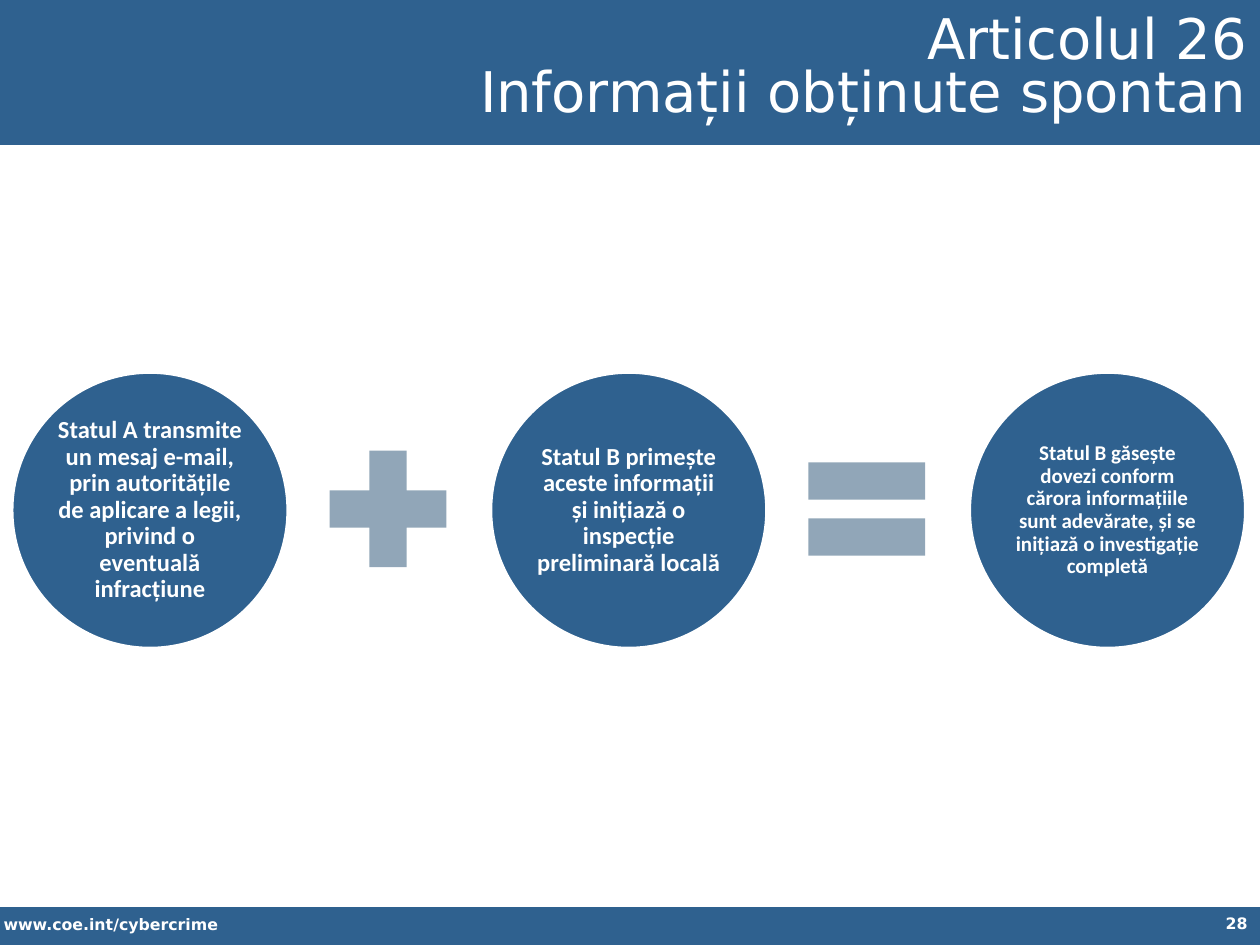
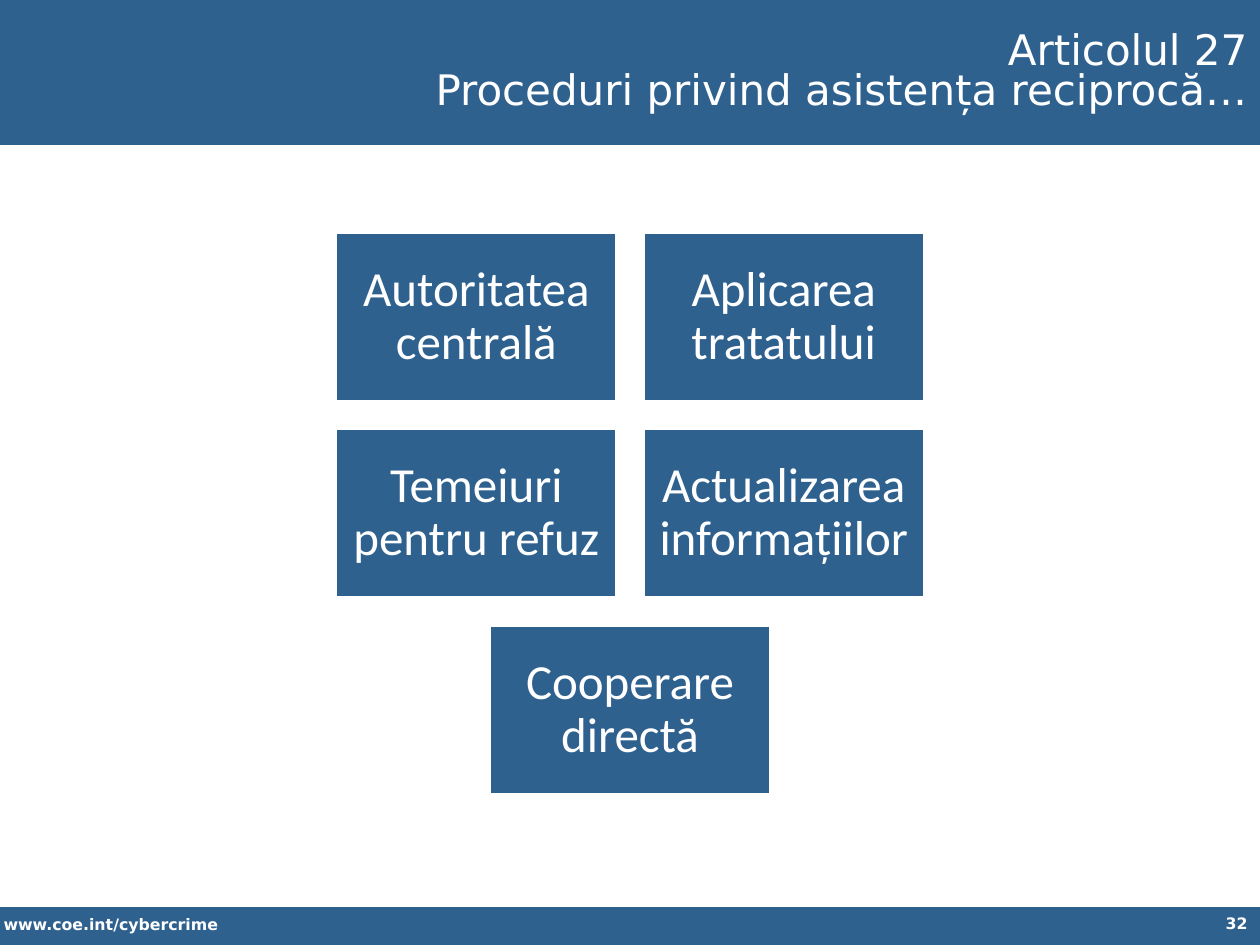
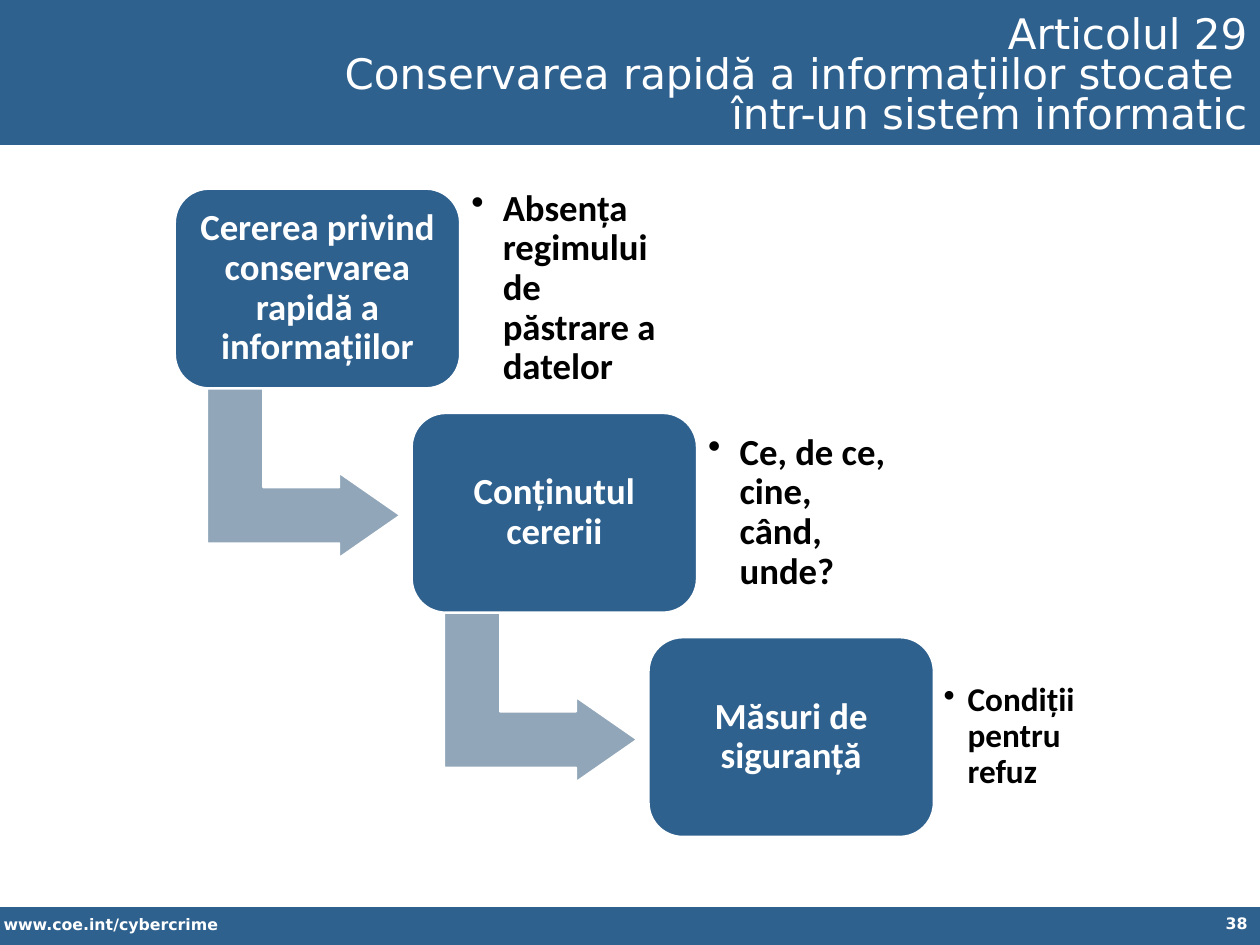
from dataclasses import dataclass
from typing import Any, NamedTuple

import pptx
import pptx.dml.color
import pptx.enum.shapes
import pptx.enum.text
import pptx.oxml.ns
import pptx.util
from lxml import etree

RGBColor = pptx.dml.color.RGBColor
KIND = pptx.enum.shapes.MSO_SHAPE
ALIGN = pptx.enum.text.PP_ALIGN
ANCHOR = pptx.enum.text.MSO_ANCHOR

BLUE = RGBColor(0x2F, 0x61, 0x8F)
GREY = RGBColor(0x91, 0xA6, 0xB8)
WHITE = RGBColor(0xFF, 0xFF, 0xFF)
BLACK = RGBColor(0x00, 0x00, 0x00)

SCALE = 9144
WIDE, HIGH = 1000, 750
SITE = "www.coe.int/cybercrime"


class Box(NamedTuple):
    left: int
    top: int
    width: int
    height: int


@dataclass(frozen=True)
class Style:
    size: int
    name: str = "Calibri"
    bold: bool = False
    color: RGBColor = WHITE
    align: Any = ALIGN.CENTER
    anchor: Any = ANCHOR.MIDDLE
    pad: tuple[int, int] = (10, 5)
    space: float = 0.9
    hang: int = 0


@dataclass(frozen=True)
class Title:
    box: Box
    size: int
    lines: tuple[str, ...]
    page: int


class Disc(NamedTuple):
    text: str
    size: int


class Step(NamedTuple):
    text: str
    note: str
    size: int
    pad: int
    hang: int


SMALL = Style(9, "DejaVu Sans", True, align=ALIGN.LEFT, anchor=ANCHOR.TOP, space=1.0)
PAGE = Style(9, "DejaVu Sans", True, align=ALIGN.RIGHT, anchor=ANCHOR.TOP, space=1.0)

DISCS = (
    Disc("Statul A transmite un mesaj e-mail, prin autoritățile de aplicare a legii, "
         "privind o eventuală infracțiune", 14),
    Disc("Statul B primește aceste informații și inițiază o inspecție preliminară locală", 14),
    Disc("Statul B găsește dovezi conform cărora informațiile sunt adevărate, "
         "și se inițiază o investigație completă", 12),
)
SIGNS = (KIND.MATH_PLUS, KIND.MATH_EQUAL)

ROWS = (
    ("Autoritatea centrală", "Aplicarea tratatului"),
    ("Temeiuri pentru refuz", "Actualizarea informațiilor"),
    ("Cooperare directă",),
)

STEPS = (
    Step("Cererea privind conservarea rapidă a informațiilor",
         "Absența regimului de păstrare a datelor", 21, 9, 25),
    Step("Conținutul cererii", "Ce, de ce, cine, când, unde?", 21, 9, 25),
    Step("Măsuri de siguranță", "Condiții pentru refuz", 19, 8, 19),
)


def px(count: int) -> int:
    return pptx.util.Emu(count * SCALE)


def apply(target: Any, values: dict[str, Any]) -> None:
    for key, value in values.items():
        setattr(target, key, value)


def bullet(para: Any, hang: int) -> None:
    para.level = 1
    props = para._p.get_or_add_pPr()
    props.set("marL", str(px(hang)))
    props.set("indent", str(-px(hang)))
    mark = etree.SubElement(props, pptx.oxml.ns.qn("a:buChar"))
    mark.set("char", "•")


def write(shape: Any, lines: tuple[str, ...], style: Style) -> None:
    frame = shape.text_frame
    side, edge = map(px, style.pad)
    apply(frame, {
        "word_wrap": True, "vertical_anchor": style.anchor,
        "margin_left": side, "margin_right": side,
        "margin_top": edge, "margin_bottom": edge,
    })
    for index, line in enumerate(lines):
        para = frame.add_paragraph() if index else frame.paragraphs[0]
        if style.hang:
            bullet(para, style.hang)
        apply(para, {"alignment": style.align, "line_spacing": style.space})
        run = para.add_run()
        run.text = line
        apply(run.font, {"name": style.name, "bold": style.bold,
                         "size": pptx.util.Pt(style.size)})
        run.font.color.rgb = style.color


def draw(slide: Any, kind: Any, box: Box, fill: RGBColor = BLUE, rim: bool = False) -> Any:
    shape = slide.shapes.add_shape(kind, *map(px, box))
    shape.shadow.inherit = False
    shape.fill.solid()
    shape.fill.fore_color.rgb = fill
    if rim:
        shape.line.color.rgb = WHITE
        shape.line.width = pptx.util.Pt(1)
    else:
        shape.line.fill.background()
    return shape


def label(slide: Any, box: Box, text: str, style: Style) -> None:
    write(slide.shapes.add_textbox(*map(px, box)), (text,), style)


def start(deck: Any, title: Title) -> Any:
    slide = deck.slides.add_slide(deck.slide_layouts[6])
    draw(slide, KIND.RECTANGLE, Box(0, -3, WIDE, 118))
    draw(slide, KIND.RECTANGLE, Box(0, 720, WIDE, 32))
    label(slide, Box(-7, 721, 352, 25), SITE, SMALL)
    label(slide, Box(767, 720, 233, 30), str(title.page), PAGE)
    head = draw(slide, KIND.RECTANGLE, title.box)
    write(head, title.lines, Style(title.size, "DejaVu Sans", align=ALIGN.RIGHT, space=0.8))
    return slide


def add_sum(slide: Any) -> None:
    pitch = 380
    for index, disc in enumerate(DISCS):
        shape = draw(slide, KIND.OVAL, Box(10 + index * pitch, 296, 218, 218), rim=True)
        write(shape, (disc.text,), Style(disc.size, bold=True, pad=(2, 2)))
    for index, sign in enumerate(SIGNS):
        draw(slide, sign, Box(245 + index * pitch, 341, 126, 126), GREY)


def add_grid(slide: Any) -> None:
    width, height, gap = 222, 133, 22
    for level, row in enumerate(ROWS):
        left = (WIDE - len(row) * (width + gap) + gap) // 2
        top = 185 + level * 156
        for index, text in enumerate(row):
            box = Box(left + index * (width + gap), top, width, height)
            write(draw(slide, KIND.RECTANGLE, box, rim=True), (text,), Style(28, pad=(12, 12)))


def add_steps(slide: Any) -> None:
    for index, step in enumerate(STEPS):
        left, top = 139 + index * 188, 150 + index * 178
        if index < len(STEPS) - 1:
            arrow = draw(slide, KIND.BENT_UP_ARROW, Box(left + 35, top + 149, 134, 153), GREY, True)
            arrow.rotation = 90
            for spot, value in enumerate((0.33, 0.25, 0.36)):
                arrow.adjustments[spot] = value
        shape = draw(slide, KIND.ROUNDED_RECTANGLE, Box(left, top, 226, 158), rim=True)
        shape.adjustments[0] = 0.17
        write(shape, (step.text,), Style(21, bold=True, pad=(9, 9)))
        label(slide, Box(left + 226, top + 15, 165, 128), step.note,
              Style(step.size, bold=True, color=BLACK, align=ALIGN.LEFT,
                    pad=(step.pad, step.pad), hang=step.hang))


def main() -> None:
    deck = pptx.Presentation()
    apply(deck, {"slide_width": px(WIDE), "slide_height": px(HIGH)})
    add_sum(start(deck, Title(
        Box(274, 5, 726, 101), 32, ("Articolul 26", "Informații obținute spontan"), 28)))
    add_grid(start(deck, Title(
        Box(183, 8, 817, 101), 24,
        ("Articolul 27", "Proceduri privind asistența reciprocă…"), 32)))
    add_steps(start(deck, Title(
        Box(217, 11, 783, 101), 24,
        ("Articolul 29", "Conservarea rapidă a informațiilor stocate ",
         "într-un sistem informatic"), 38)))
    deck.save("out.pptx")


if __name__ == "__main__":
    main()
